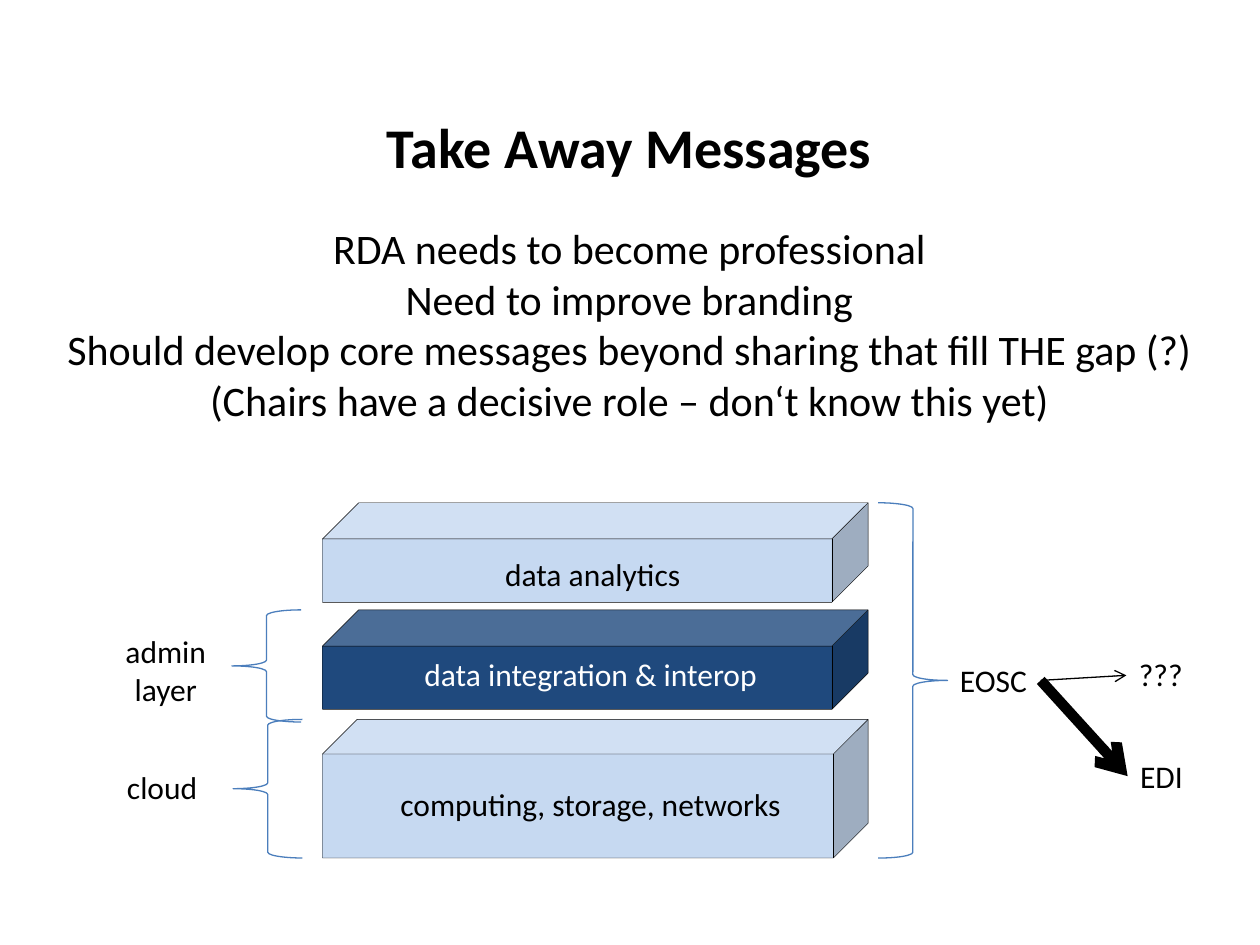
from lxml import etree
from pptx import Presentation
from pptx.dml.color import RGBColor
from pptx.enum.shapes import MSO_CONNECTOR, MSO_SHAPE
from pptx.enum.text import MSO_ANCHOR, MSO_AUTO_SIZE, PP_ALIGN
from pptx.oxml.ns import qn
from pptx.util import Inches, Pt

CUBE = MSO_SHAPE.CUBE
LEFT_BRACE = MSO_SHAPE.LEFT_BRACE
RIGHT_BRACE = MSO_SHAPE.RIGHT_BRACE
STRAIGHT = MSO_CONNECTOR.STRAIGHT
LEFT = PP_ALIGN.LEFT
CENTER = PP_ALIGN.CENTER
TOP = MSO_ANCHOR.TOP
FIT_SHAPE = MSO_AUTO_SIZE.SHAPE_TO_FIT_TEXT
TITLE_ONLY = 5

FONT = "Calibri"
COLORS = {
    "black": "000000",
    "white": "FFFFFF",
    "pale": "C6D9F1",
    "navy": "1F497D",
    "brace": "4B7EBC",
}
MESSAGES = [
    "RDA needs to become professional",
    "Need to improve branding",
    "Should develop core messages beyond sharing that fill THE gap (?)",
    "(Chairs have a decisive role – don‘t know this yet)",
]
LAYERS = [
    (5.71, 1.1, 0.25, "pale"),
    (4.84, 0.79, 0.364, "navy"),
    (3.99, 0.79, 0.364, "pale"),
]
BRACES = [
    (RIGHT_BRACE, 6.97, 3.99, 2.82),
    (LEFT_BRACE, 1.85, 5.71, 1.1),
    (LEFT_BRACE, 1.84, 4.84, 0.89),
]
LABELS = [
    (["computing, storage, networks"], 3.08, 6.18, 3.26, "black"),
    (["data integration & interop"], 3.27, 5.15, 2.88, "white"),
    (["data analytics"], 3.91, 4.36, 1.61, "black"),
    (["EOSC"], 7.52, 5.2, 0.74, "black"),
    (["EDI"], 8.95, 5.96, 0.54, "black"),
    (["???"], 8.94, 5.15, 0.55, "black"),
    (["cloud"], 0.91, 6.05, 0.77, "black"),
    (["admin", "layer"], 0.89, 4.97, 0.85, "black"),
]
ARROW_START = (8.26, 5.4)
ARROWS = [((8.95, 6.16), 6), ((8.94, 5.36), 0.75)]


class SlideBuilder:
    """Holds the style and the current slide, and draws each kind of element."""

    def __init__(self, slide):
        self.slide = slide

    def color(self, name):
        return RGBColor.from_string(COLORS[name])

    def outline(self, line, color, width):
        line.color.rgb = self.color(color)
        line.width = Pt(width)

    def add_lines(self, frame, lines, size, color="black", align=LEFT, bold=False):
        for index, text in enumerate(lines):
            paragraph = frame.add_paragraph() if index else frame.paragraphs[0]
            paragraph.alignment = align
            run = paragraph.add_run()
            run.text = text
            run.font.name = FONT
            run.font.size = Pt(size)
            run.font.bold = bold
            run.font.color.rgb = self.color(color)

    def title(self, text, left, top, width, height):
        title = self.slide.shapes.title
        title.left, title.top = Inches(left), Inches(top)
        title.width, title.height = Inches(width), Inches(height)
        title.text_frame.vertical_anchor = TOP
        self.add_lines(title.text_frame, [text], 32, align=CENTER, bold=True)

    def text(self, lines, left, top, width, height, size,
             color="black", align=LEFT, wrap=False):
        box = self.slide.shapes.add_textbox(
            Inches(left), Inches(top), Inches(width), Inches(height))
        box.text_frame.word_wrap = wrap
        box.text_frame.auto_size = FIT_SHAPE
        self.add_lines(box.text_frame, lines, size, color, align)

    def shape(self, kind, left, top, width, height):
        shape = self.slide.shapes.add_shape(
            kind, Inches(left), Inches(top), Inches(width), Inches(height))
        shape.shadow.inherit = False
        return shape

    def cube(self, left, top, width, height, depth, fill):
        cube = self.shape(CUBE, left, top, width, height)
        cube.adjustments[0] = depth
        cube.fill.solid()
        cube.fill.fore_color.rgb = self.color(fill)
        self.outline(cube.line, "black", 0.25)

    def brace(self, kind, left, top, width, height):
        brace = self.shape(kind, left, top, width, height)
        brace.fill.background()
        self.outline(brace.line, "brace", 0.75)

    def arrow(self, start, end, width):
        points = [Inches(value) for value in (*start, *end)]
        arrow = self.slide.shapes.add_connector(STRAIGHT, *points)
        self.outline(arrow.line, "black", width)
        properties = arrow._element.spPr
        line = properties.find(qn("a:ln"))
        etree.SubElement(line, qn("a:tailEnd"), type="arrow")
        etree.SubElement(properties, qn("a:effectLst"))


def main():
    presentation = Presentation()
    presentation.slide_width = Inches(10)
    presentation.slide_height = Inches(7.5)
    layout = presentation.slide_layouts[TITLE_ONLY]
    builder = SlideBuilder(presentation.slides.add_slide(layout))

    builder.title("Take Away Messages", 0.35, 0.84, 9.29, 0.64)
    builder.text(MESSAGES, 0.35, 1.72, 9.29, 1.71, 24, align=CENTER, wrap=True)
    for top, height, depth, fill in LAYERS:
        builder.cube(2.56, top, 4.33, height, depth, fill)
    for kind, left, top, height in BRACES:
        builder.brace(kind, left, top, 0.55, height)
    for lines, left, top, width, color in LABELS:
        align = CENTER if len(lines) > 1 else LEFT
        height = 0.1 + 0.3 * len(lines)
        builder.text(lines, left, top, width, height, 18, color, align)
    for end, width in ARROWS:
        builder.arrow(ARROW_START, end, width)

    presentation.save("out.pptx")


if __name__ == "__main__":
    main()
